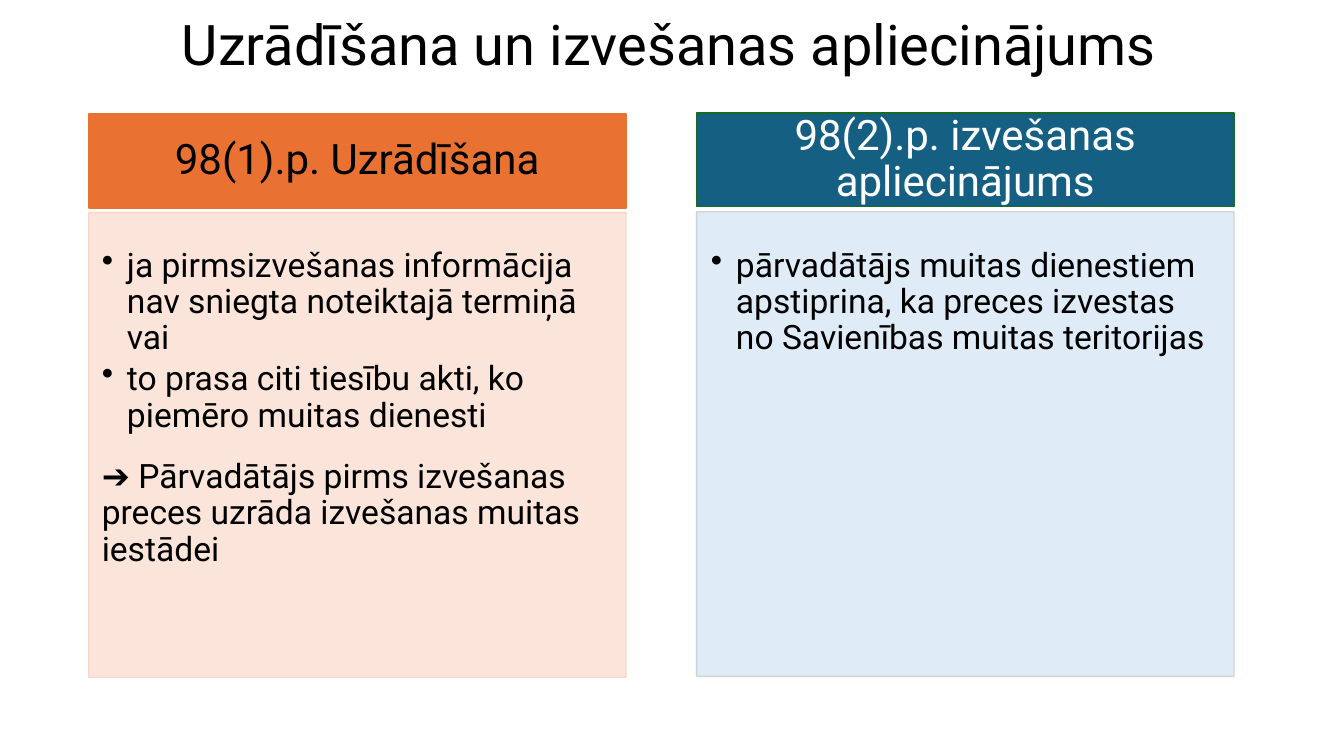
from pptx import Presentation
from pptx.dml.color import RGBColor
from pptx.enum.shapes import MSO_SHAPE as Shape
from pptx.enum.text import MSO_ANCHOR as Anchor, PP_ALIGN as Align
from pptx.oxml.ns import qn
from pptx.util import Inches, Pt
from lxml.etree import SubElement

FONT = "Roboto"
COLUMN_WIDTH, BODY_HEIGHT = 5.33, 4.61
HEADER_HEIGHT, HEADER_STEP = 0.93, 0.98
BULLET_INDENT = 0.25

COLUMNS = [
    dict(left=0.88, top=1.13, heading="98(1).p. Uzrādīšana", heading_color="000000",
         fill="E97132", line="E97132", line_width=1.5,
         body_fill="FBE3D6", body_line="F7D5CE", insets=(0.13, 0.35, 0.17, 0.19),
         items=[("ja pirmsizvešanas informācija nav sniegta noteiktajā termiņā vai", True, 3.6),
                ("to prasa citi tiesību akti, ko piemēro muitas dienesti", True, 18),
                ("➔ Pārvadātājs pirms izvešanas preces uzrāda izvešanas muitas iestādei",
                 False, 3.6)]),
    dict(left=6.91, top=1.12, heading="98(2).p. izvešanas apliecinājums",
         heading_color="FFFFFF", fill="156082", line="196B24", line_width=1,
         body_fill="DCEAF7", body_line="CCD4CD", insets=(0.14, 0.36, 0.19, 0.21),
         items=[("pārvadātājs muitas dienestiem apstiprina, ka preces izvestas "
                 "no Savienības muitas teritorijas", True, 3.6)]),
]


def paint(fill, color, opacity=100):
    """Give a fill a solid hex colour and an opacity in percent."""
    fill.solid()
    fill.fore_color.rgb = RGBColor.from_string(color)
    if opacity < 100:
        color_node = next(fill._xPr.iter(qn("a:srgbClr")))
        SubElement(color_node, qn("a:alpha"), val=str(opacity * 1000))


def add_box(page, left, top, width, height, fill, line, line_width,
            insets, anchor=Anchor.MIDDLE, opacity=100):
    box = page.shapes.add_shape(Shape.RECTANGLE, Inches(left), Inches(top),
                                Inches(width), Inches(height))
    box.shadow.inherit = False
    paint(box.fill, fill, opacity)
    paint(box.line.fill, line, opacity)
    box.line.width = Pt(line_width)
    frame = box.text_frame
    frame.word_wrap = True
    frame.vertical_anchor = anchor
    (frame.margin_left, frame.margin_top,
     frame.margin_right, frame.margin_bottom) = map(Inches, insets)
    return frame


def write(para, text, size, color="000000", align=Align.CENTER, after=0, bullet=False):
    para.alignment = align
    para.line_spacing = 0.9
    para.space_after = Pt(after)
    if bullet:
        properties = para._p.get_or_add_pPr()
        properties.set("marL", str(Inches(BULLET_INDENT)))
        properties.set("indent", str(-Inches(BULLET_INDENT)))
        SubElement(properties, qn("a:buChar"), char="•")
    span = para.add_run()
    span.text = text
    span.font.name = FONT
    span.font.size = Pt(size)
    span.font.color.rgb = RGBColor.from_string(color)


def add_title(page, left, top, width, height):
    frame = add_box(page, left, top, width, height, "FFFFFF", "FFFFFF", 1.5,
                    (0.1, 0.05, 0.1, 0))
    write(frame.paragraphs[0], "Uzrādīšana un izvešanas apliecinājums", 40)


def add_column(page, left, top, heading, heading_color, fill, line, line_width,
               body_fill, body_line, insets, items):
    header = add_box(page, left, top, COLUMN_WIDTH, HEADER_HEIGHT, fill, line,
                     line_width, (0.23, 0.13, 0.23, 0.13))
    write(header.paragraphs[0], heading, 30, heading_color)
    body = add_box(page, left, top + HEADER_STEP, COLUMN_WIDTH, BODY_HEIGHT,
                   body_fill, body_line, 1, insets, Anchor.TOP, opacity=90)
    for index, (text, bullet, after) in enumerate(items):
        para = body.add_paragraph() if index else body.paragraphs[0]
        write(para, text, 24, align=Align.LEFT, after=after, bullet=bullet)


def main():
    deck = Presentation()
    deck.slide_width, deck.slide_height = Inches(13.33), Inches(7.5)
    page = deck.slides.add_slide(deck.slide_layouts[6])
    paint(page.background.fill, "FFFFFF")
    add_title(page, 0, 0.05, 13.27, 0.8)
    for column in COLUMNS:
        add_column(page, **column)
    deck.save("out.pptx")


if __name__ == "__main__":
    main()
